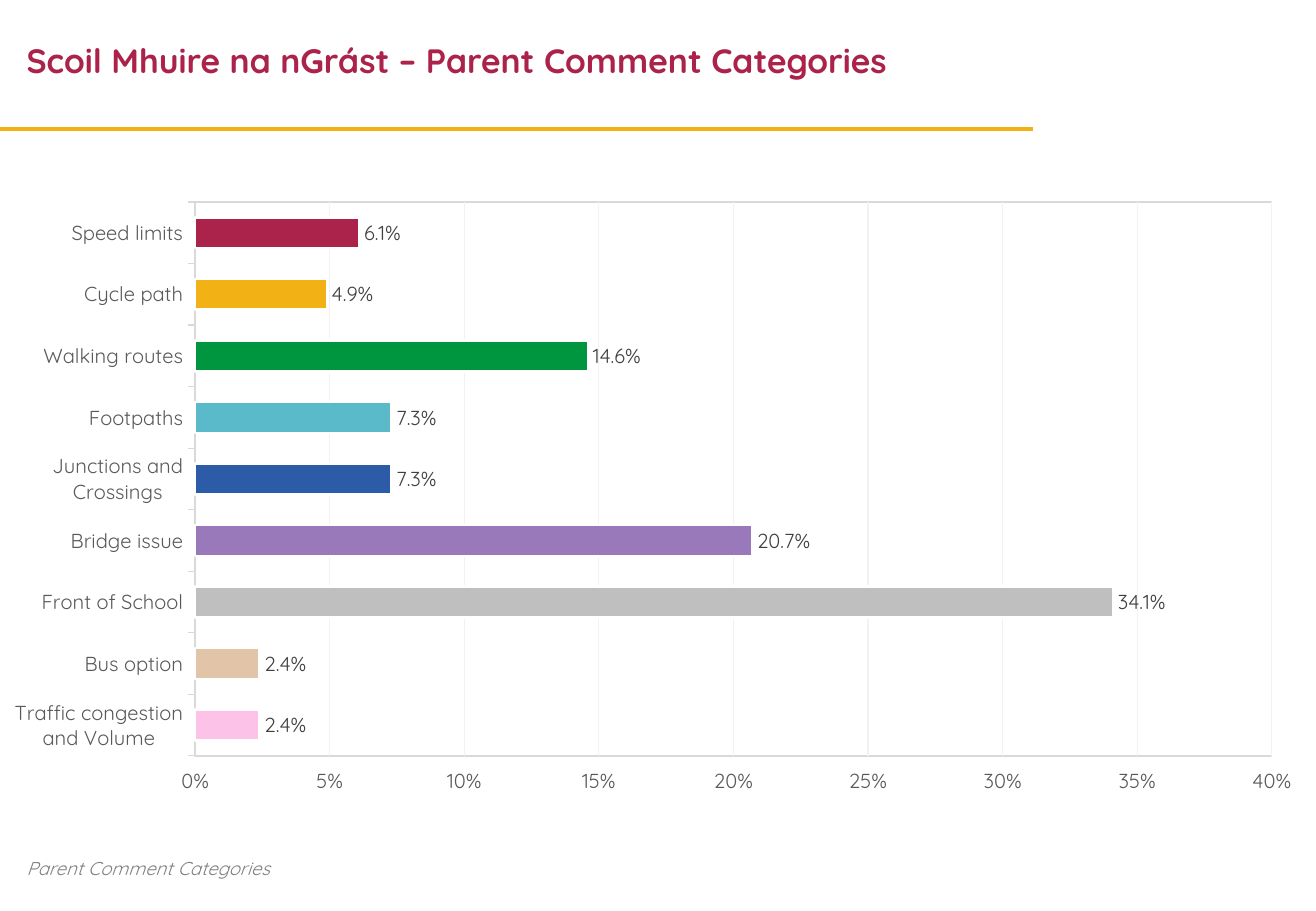
from lxml import etree
from pptx import Presentation
from pptx.chart.data import CategoryChartData
from pptx.dml.color import RGBColor
from pptx.enum.chart import XL_CHART_TYPE, XL_LABEL_POSITION, XL_TICK_MARK
from pptx.enum.shapes import MSO_CONNECTOR
from pptx.enum.text import MSO_ANCHOR, MSO_AUTO_SIZE
from pptx.oxml import parse_xml
from pptx.oxml.ns import nsdecls, qn
from pptx.util import Pt

BAR_CLUSTERED = XL_CHART_TYPE.BAR_CLUSTERED
OUTSIDE_END = XL_LABEL_POSITION.OUTSIDE_END
TICK_OUTSIDE = XL_TICK_MARK.OUTSIDE
TICK_NONE = XL_TICK_MARK.NONE
STRAIGHT = MSO_CONNECTOR.STRAIGHT
MIDDLE = MSO_ANCHOR.MIDDLE
FIT_SHAPE = MSO_AUTO_SIZE.SHAPE_TO_FIT_TEXT
FIT_NONE = MSO_AUTO_SIZE.NONE

PX = 9144
THEME = {
    "font": "Quicksand",
    "title": {"size": 20, "color": "AB224A", "bold": True},
    "caption": {"size": 11, "color": "808080", "italic": True},
    "chart": {"size": 12, "color": "000000"},
    "axis": {"size": 12, "color": "595959"},
    "label": {"size": 12, "color": "404040"},
    "rule": "F2B114",
    "frame": "D9D9D9",
    "grid": "F2F2F2",
    "bar_edge": "FFFFFF",
}
TEXTS = [
    ("Scoil Mhuire na nGrást – Parent Comment Categories", "title",
     (12, 12, 831, 79), {"word_wrap": True, "auto_size": FIT_NONE}, 0.9),
    ("Parent Comment Categories", "caption",
     (12, 700, 237, 29), {"word_wrap": False, "auto_size": FIT_SHAPE}, 1.0),
]
CATEGORIES = [
    ("Traffic congestion and Volume", 0.024, "FDC2E8"),
    ("Bus option", 0.024, "E2C5A8"),
    ("Front of School", 0.341, "BFBFBF"),
    ("Bridge issue", 0.207, "9A79BB"),
    ("Junctions and Crossings", 0.073, "2C5CA8"),
    ("Footpaths", 0.073, "5ABACA"),
    ("Walking routes", 0.146, "009640"),
    ("Cycle path", 0.049, "F2B114"),
    ("Speed limits", 0.061, "AB224A"),
]


def style_font(font, role):
    formats = dict(THEME[role], name=THEME["font"])
    font.color.rgb = RGBColor.from_string(formats.pop("color"))
    formats["size"] = Pt(formats["size"])
    for name, value in formats.items():
        setattr(font, name, value)


def style_line(line, color, width):
    line.color.rgb = RGBColor.from_string(color)
    line.width = Pt(width)


presentation = Presentation()
presentation.slide_width = 1083 * PX
presentation.slide_height = 750 * PX
slide = presentation.slides.add_slide(presentation.slide_layouts[6])

rule = slide.shapes.add_connector(STRAIGHT, 0, 106 * PX, 850 * PX, 106 * PX)
style_line(rule.line, THEME["rule"], 2.25)
etree.SubElement(rule._element.spPr, qn("a:effectLst"))

for text, role, box, frame_formats, line_spacing in TEXTS:
    shape = slide.shapes.add_textbox(*(length * PX for length in box))
    frame = shape.text_frame
    frame.vertical_anchor = MIDDLE
    for name, value in frame_formats.items():
        setattr(frame, name, value)
    paragraph = frame.paragraphs[0]
    paragraph.line_spacing = line_spacing
    run = paragraph.add_run()
    run.text = text
    style_font(run.font, role)

chart_data = CategoryChartData(number_format="0.0%")
chart_data.categories = [name for name, share, color in CATEGORIES]
chart_data.add_series("Series 1", [share for name, share, color in CATEGORIES])
chart_box = (length * PX for length in (12, 138, 1059, 526))
chart = slide.shapes.add_chart(BAR_CLUSTERED, *chart_box, chart_data).chart
chart.has_title = False
chart.has_legend = False
style_font(chart.font, "chart")

category_axis = chart.category_axis
value_axis = chart.value_axis
for axis in (category_axis, value_axis):
    axis.major_tick_mark = TICK_OUTSIDE
    axis.minor_tick_mark = TICK_NONE
    style_font(axis.tick_labels.font, "axis")
category_axis.has_major_gridlines = False
style_line(category_axis.format.line, THEME["frame"], 0.75)
value_axis.format.line.fill.background()
value_axis.minimum_scale = 0
value_axis.maximum_scale = 0.4
value_axis.major_unit = 0.05
value_axis.tick_labels.number_format = "0%"
value_axis.tick_labels.number_format_is_linked = False
style_line(value_axis.major_gridlines.format.line, THEME["grid"], 0.75)

plot = chart.plots[0]
plot.gap_width = 100
plot.vary_by_categories = False
plot.has_data_labels = True
labels = plot.data_labels
label_formats = {
    "show_value": True,
    "position": OUTSIDE_END,
    "number_format": "0.0%",
    "number_format_is_linked": False,
}
for name, value in label_formats.items():
    setattr(labels, name, value)
style_font(labels.font, "label")

series = plot.series[0]
series.invert_if_negative = False
for index, (name, share, color) in enumerate(CATEGORIES):
    bar = series.points[index].format
    bar.fill.solid()
    bar.fill.fore_color.rgb = RGBColor.from_string(color)
    style_line(bar.line, THEME["bar_edge"], 1.5)

plot_area = chart._chartSpace.chart.plotArea
for layout in plot_area.findall(qn("c:layout")):
    plot_area.remove(layout)
plot_area.insert(0, parse_xml(
    f'<c:layout {nsdecls("c")}><c:manualLayout><c:layoutTarget val="inner"/>'
    '<c:xMode val="edge"/><c:yMode val="edge"/><c:x val="0.137"/><c:y val="0.054"/>'
    '<c:w val="0.84"/><c:h val="0.867"/></c:manualLayout></c:layout>'))
plot_area.append(parse_xml(
    f'<c:spPr {nsdecls("c", "a")}><a:noFill/><a:ln w="9525"><a:solidFill>'
    f'<a:srgbClr val="{THEME["frame"]}"/></a:solidFill></a:ln></c:spPr>'))

presentation.save("out.pptx")
